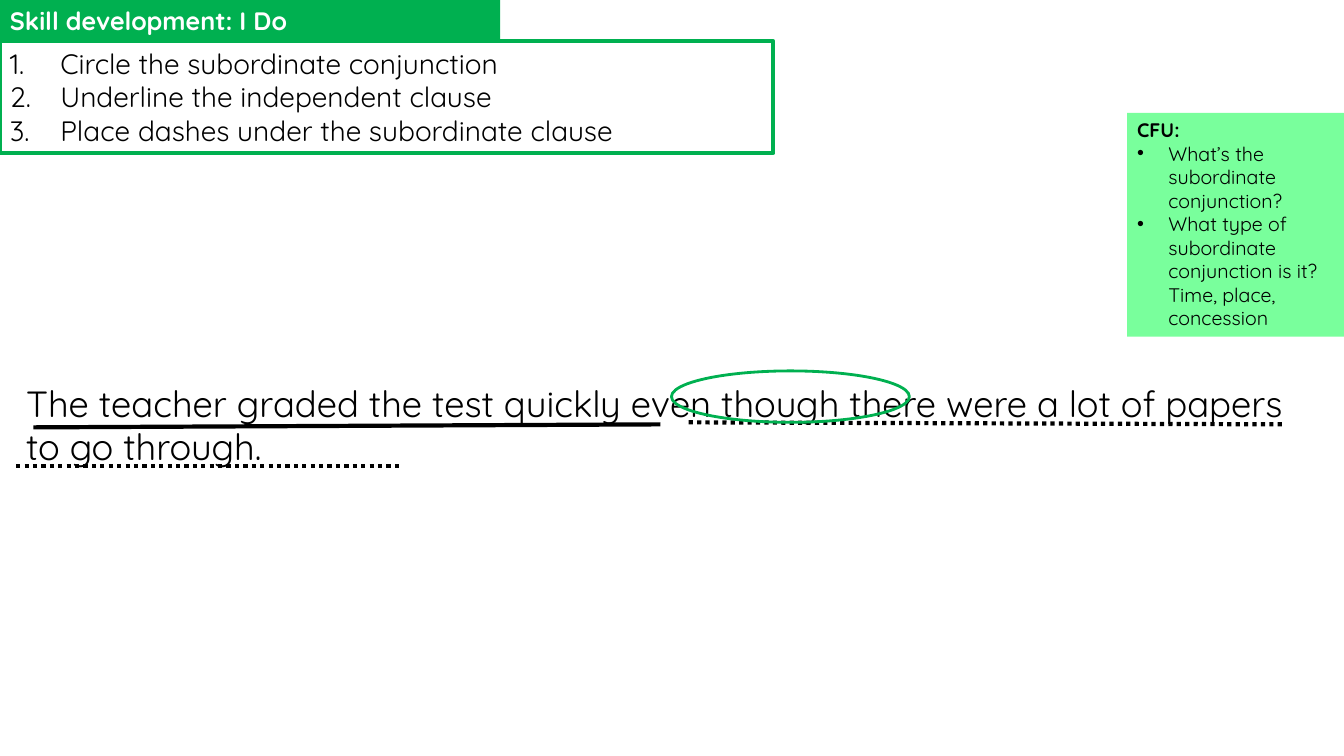
from pptx import Presentation
from pptx.dml.color import RGBColor
from pptx.enum.dml import MSO_LINE
from pptx.enum.shapes import MSO_CONNECTOR, MSO_SHAPE
from pptx.enum.text import MSO_ANCHOR, PP_ALIGN
from pptx.oxml.ns import qn
from pptx.util import Inches, Pt
from lxml import etree

RECT, OVAL = MSO_SHAPE.RECTANGLE, MSO_SHAPE.OVAL
LINE = MSO_CONNECTOR.STRAIGHT
DOTS = MSO_LINE.ROUND_DOT
TOP, LEFT = MSO_ANCHOR.TOP, PP_ALIGN.LEFT

FONT = "Quicksand"
BLACK = RGBColor(0x00, 0x00, 0x00)
WHITE = RGBColor(0xFF, 0xFF, 0xFF)
GREEN = RGBColor(0x00, 0xB0, 0x50)
MINT = RGBColor(0x79, 0xFF, 0x9C)

STEPS = [
    "Circle the subordinate conjunction",
    "Underline the independent clause",
    "Place dashes under the subordinate clause",
]
CHECKS = [
    "What’s the subordinate conjunction?",
    "What type of subordinate conjunction is it? Time, place, concession",
]
SENTENCE = ("The teacher graded the test quickly even though "
            "there were a lot of papers to go through.")


def add_panel(slide, kind, box, fill=None, edge=None, width=0):
    """Draw a flat shape with an optional fill and outline."""
    panel = slide.shapes.add_shape(kind, *map(Inches, box))
    panel.shadow.inherit = False
    if fill is None:
        panel.fill.background()
    else:
        panel.fill.solid()
        panel.fill.fore_color.rgb = fill
    if edge is None:
        panel.line.fill.background()
    else:
        panel.line.color.rgb = edge
        panel.line.width = Pt(width)
    return panel


def set_mark(para, indent, tag, **attrs):
    """Give a paragraph a hanging bullet or number."""
    props = para._p.get_or_add_pPr()
    props.set("marL", str(Inches(indent)))
    props.set("indent", str(-Inches(indent)))
    etree.SubElement(props, qn("a:buFont"), typeface="Arial" if tag == "a:buChar" else "+mj-lt")
    etree.SubElement(props, qn(tag), **attrs)


def write(shape, lines, size, color=BLACK):
    """Fill a shape with paragraphs and return them."""
    frame = shape.text_frame
    frame.word_wrap = True
    frame.vertical_anchor = TOP
    frame.text = "\n".join(lines)
    for para in frame.paragraphs:
        para.alignment = LEFT
        para.font.name = FONT
        para.font.size = Pt(size)
        para.font.color.rgb = color
    return frame.paragraphs


def add_rule(slide, x1, y1, x2, y2, dash=None):
    """Draw one heavy black line under the sentence."""
    rule = slide.shapes.add_connector(LINE, *map(Inches, (x1, y1, x2, y2)))
    rule.line.color.rgb = BLACK
    rule.line.width = Pt(3)
    if dash is not None:
        rule.line.dash_style = dash
    etree.SubElement(rule._element.spPr, qn("a:effectLst"))


def add_steps(slide, box):
    panel = add_panel(slide, RECT, box, WHITE, GREEN, 3)
    for para in write(panel, STEPS, 20):
        set_mark(para, 0.5, "a:buAutoNum", type="arabicPeriod")


def add_title(slide, box):
    panel = add_panel(slide, RECT, box, GREEN)
    write(panel, ["Skill development: I Do"], 18, WHITE)[0].font.bold = True


def add_checks(slide, box):
    panel = add_panel(slide, RECT, box, MINT)
    head, *items = write(panel, ["CFU:"] + CHECKS, 14)
    head.font.bold = True
    for para in items:
        set_mark(para, 0.31, "a:buChar", char="•")


def add_example(slide, box):
    x, y, w, h = box
    text = slide.shapes.add_textbox(*map(Inches, box))
    write(text, [SENTENCE], 26)
    # Subordinate clause, over two lines
    add_rule(slide, x + 6.67, y + 0.46, x + 12.58, y + 0.48, DOTS)
    add_rule(slide, x, y + 0.89, x + 3.82, y + 0.89, DOTS)
    # Independent clause
    add_rule(slide, x + 0.17, y + 0.51, x + 6.39, y + 0.48)
    # Conjunction
    add_panel(slide, OVAL, (x + 6.5, y - 0.05, 2.36, 0.51), edge=GREEN, width=2)


def main():
    deck = Presentation()
    deck.slide_width, deck.slide_height = Inches(13.33), Inches(7.5)
    slide = deck.slides.add_slide(deck.slide_layouts[6])
    add_steps(slide, (0, 0.41, 7.67, 1.11))
    add_title(slide, (0, 0, 4.96, 0.4))
    add_checks(slide, (11.18, 1.12, 2.15, 2.22))
    add_example(slide, (0.16, 3.73, 13.01, 0.98))
    deck.save("out.pptx")


if __name__ == "__main__":
    main()
